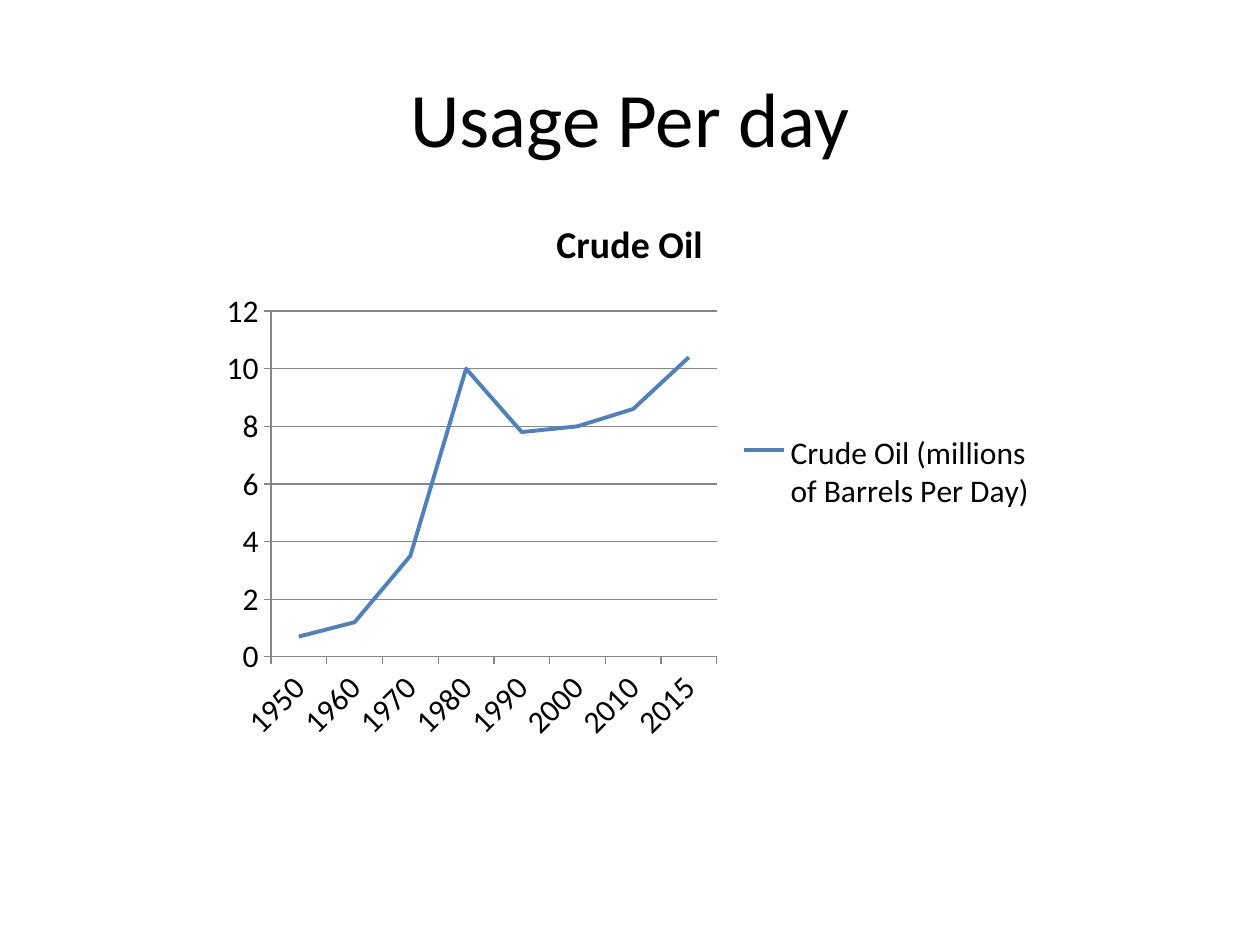
from dataclasses import dataclass

from pptx import Presentation
from pptx import util as u
from pptx.chart import data as chart_data
from pptx.dml.color import RGBColor
from pptx.enum import chart as chart_enum
from pptx.enum import text

FONT = "Calibri"
COLOURS = {"text": "000000", "line": "4F81BD", "grid": "878787"}
USAGE = {
    "1950": 0.7, "1960": 1.2, "1970": 3.5, "1980": 10,
    "1990": 7.8, "2000": 8, "2010": 8.6, "2015": 10.4,
}


@dataclass
class Area:
    left: float
    top: float
    width: float
    height: float

    def lengths(self) -> tuple:
        return tuple(u.Cm(n) for n in (self.left, self.top, self.width, self.height))


TITLE_AREA = Area(1.27, 0.76, 22.86, 3.18)
CHART_AREA = Area(4.23, 3.89, 16.93, 11.28)


def style_font(font, size: float, bold: bool = False) -> None:
    font.name = FONT
    font.size = u.Pt(size)
    font.bold = bold
    font.color.rgb = RGBColor.from_string(COLOURS["text"])


def style_line(line, colour: str, width: float) -> None:
    line.color.rgb = RGBColor.from_string(COLOURS[colour])
    line.width = u.Pt(width)


def add_title(page, area: Area, words: str) -> None:
    box = page.shapes.add_textbox(*area.lengths())
    frame = box.text_frame
    frame.word_wrap = True
    frame.vertical_anchor = text.MSO_ANCHOR.MIDDLE
    frame.text = words
    para = frame.paragraphs[0]
    para.alignment = text.PP_ALIGN.CENTER
    style_font(para.runs[0].font, 44)


def add_usage_chart(page, area: Area) -> None:
    figures = chart_data.CategoryChartData()
    figures.categories = list(USAGE)
    figures.add_series("Crude Oil (millions of Barrels Per Day)", list(USAGE.values()))
    chart = page.shapes.add_chart(
        chart_enum.XL_CHART_TYPE.LINE_STACKED, *area.lengths(), figures
    ).chart
    style_font(chart.font, 18)

    heading = chart.chart_title.text_frame
    heading.text = "Crude Oil"
    style_font(heading.paragraphs[0].runs[0].font, 21.6, bold=True)

    chart.has_legend = True
    chart.legend.position = chart_enum.XL_LEGEND_POSITION.RIGHT
    chart.legend.include_in_layout = False

    for axis in (chart.category_axis, chart.value_axis):
        axis.major_tick_mark = chart_enum.XL_TICK_MARK.OUTSIDE
        axis.minor_tick_mark = chart_enum.XL_TICK_MARK.NONE
        style_line(axis.format.line, "grid", 0.75)
    chart.value_axis.has_major_gridlines = True
    style_line(chart.value_axis.major_gridlines.format.line, "grid", 0.75)

    plot = chart.plots[0]
    plot.vary_by_categories = False
    series = plot.series[0]
    series.smooth = False
    series.marker.style = chart_enum.XL_MARKER_STYLE.NONE
    style_line(series.format.line, "line", 2.25)


def main() -> None:
    deck = Presentation()
    deck.slide_width = u.Cm(25.4)
    deck.slide_height = u.Cm(19.05)
    page = deck.slides.add_slide(deck.slide_layouts[6])
    add_title(page, TITLE_AREA, "Usage Per day")
    add_usage_chart(page, CHART_AREA)
    deck.save("out.pptx")


if __name__ == "__main__":
    main()
